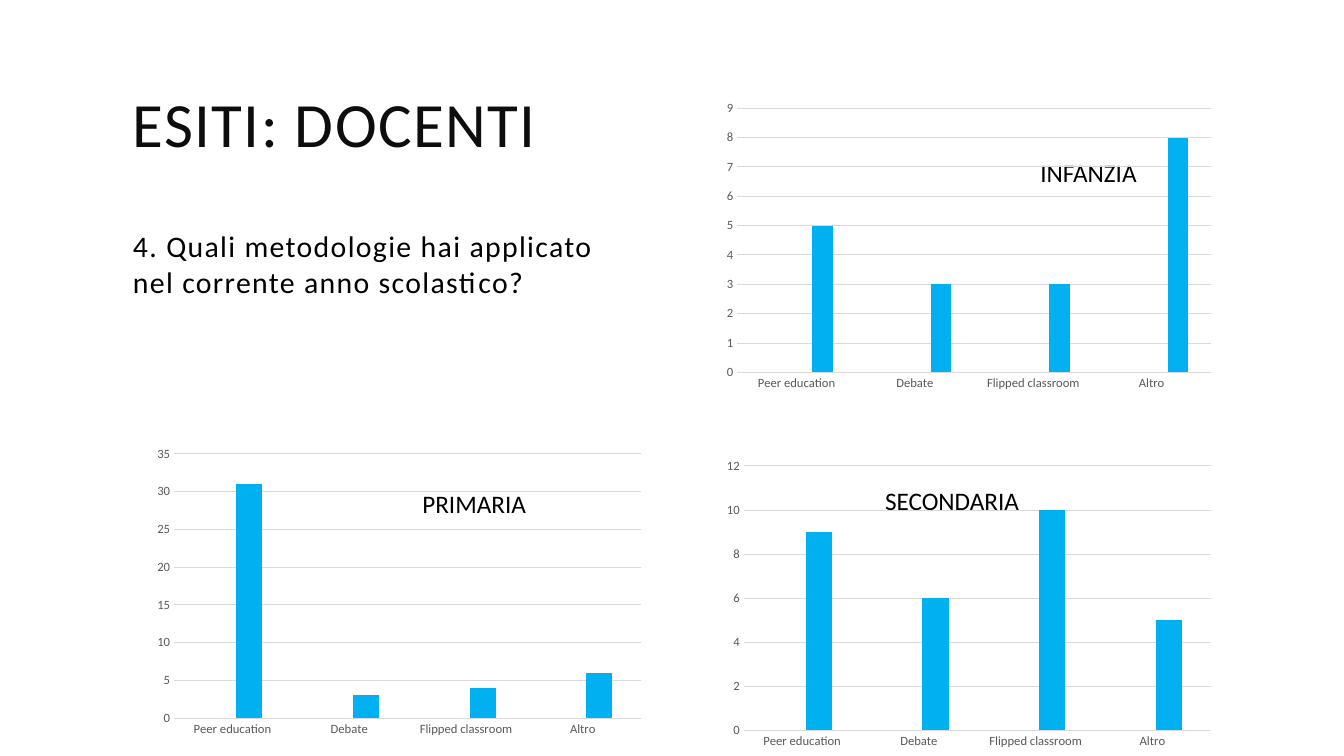
import pptx
import pptx.chart.data
import pptx.dml.color
import pptx.enum.chart
import pptx.enum.text
import pptx.util

Inches = pptx.util.Inches
Pt = pptx.util.Pt

FONT = "Calibri"
COLOURS = {
    "title": "0D0D0D",
    "text": "000000",
    "axis_text": "595959",
    "grid": "D9D9D9",
    "empty_first": "1CADE4",
    "empty_second": "2683C6",
    "answers": "00B0F0",
}
METHODS = ["Peer education", "Debate", "Flipped classroom", "Altro"]
CHART_WIDTH, CHART_HEIGHT = 5, 3


def rgb(name):
    return pptx.dml.color.RGBColor.from_string(COLOURS[name])


def set_font(font, size, colour):
    for attribute, value in {"name": FONT, "size": Pt(size)}.items():
        setattr(font, attribute, value)
    font.color.rgb = rgb(colour)


def add_text(slide, box, words, size, colour="text", spacing=0, middle=False):
    frame = slide.shapes.add_textbox(*map(Inches, box)).text_frame
    anchors = pptx.enum.text.MSO_ANCHOR
    frame_format = {
        "word_wrap": True,
        "vertical_anchor": anchors.MIDDLE if middle else anchors.TOP,
    }
    for attribute, value in frame_format.items():
        setattr(frame, attribute, value)
    run = frame.paragraphs[0].add_run()
    run.text = words
    set_font(run.font, size, colour)
    if spacing:
        run.font._element.set("spc", str(spacing * 100))


def style_axis(axis):
    axis_format = {
        "major_tick_mark": pptx.enum.chart.XL_TICK_MARK.NONE,
        "minor_tick_mark": pptx.enum.chart.XL_TICK_MARK.NONE,
    }
    for attribute, value in axis_format.items():
        setattr(axis, attribute, value)
    set_font(axis.tick_labels.font, 9, "axis_text")


def style_line(line):
    line.color.rgb = rgb("grid")
    line.width = Pt(0.75)


def add_answers_chart(slide, left, top, answers, empty_series):
    """Clustered columns, with the empty series ahead of the answers."""
    data = pptx.chart.data.CategoryChartData()
    data.categories = METHODS
    all_values = [[None] * len(METHODS)] * len(empty_series) + [answers]
    for number, values in enumerate(all_values, start=1):
        data.add_series(f"Series {number}", values)
    chart = slide.shapes.add_chart(
        pptx.enum.chart.XL_CHART_TYPE.COLUMN_CLUSTERED,
        Inches(left), Inches(top), Inches(CHART_WIDTH), Inches(CHART_HEIGHT),
        data,
    ).chart
    for attribute, value in {"has_legend": False, "has_title": False}.items():
        setattr(chart, attribute, value)
    set_font(chart.font, 10, "text")

    # Columns
    plot = chart.plots[0]
    plot_format = {"gap_width": 219, "overlap": -27, "vary_by_categories": False}
    for attribute, value in plot_format.items():
        setattr(plot, attribute, value)
    for series, colour in zip(plot.series, empty_series + ["answers"]):
        series.format.fill.solid()
        series.format.fill.fore_color.rgb = rgb(colour)

    # Axes
    style_axis(chart.category_axis)
    style_line(chart.category_axis.format.line)
    style_axis(chart.value_axis)
    chart.value_axis.format.line.fill.background()
    chart.value_axis.has_major_gridlines = True
    style_line(chart.value_axis.major_gridlines.format.line)


def main():
    deck = pptx.Presentation()
    deck.slide_width, deck.slide_height = Inches(13.33), Inches(7.5)
    slide = deck.slides.add_slide(deck.slide_layouts[6])

    # Title and question
    add_text(slide, (1.22, 0.62, 8.48, 1.19), "ESITI: DOCENTI", 45,
             "title", spacing=1, middle=True)
    add_text(slide, (1.22, 2.21, 5.12, 0.82),
             "4. Quali metodologie hai applicato nel corrente anno scolastico?",
             21.3, spacing=1)

    # School levels
    levels = [
        ("INFANZIA", 10.22, 1.51, 2.04),
        ("PRIMARIA", 4.09, 4.8, 1.88),
        ("SECONDARIA", 8.68, 4.77, 2.04),
    ]
    for level, left, top, width in levels:
        add_text(slide, (left, top, width, 0.4), level, 18)

    # Answers by school level: infanzia, primaria, secondaria
    add_answers_chart(slide, 7.11, 0.94, [5, 3, 3, 8],
                      ["empty_first", "empty_second"])
    add_answers_chart(slide, 1.46, 4.37, [31, 3, 4, 6], ["empty_first"])
    add_answers_chart(slide, 7.11, 4.49, [9, 6, 10, 5], ["empty_first"])

    deck.save("out.pptx")


if __name__ == "__main__":
    main()
